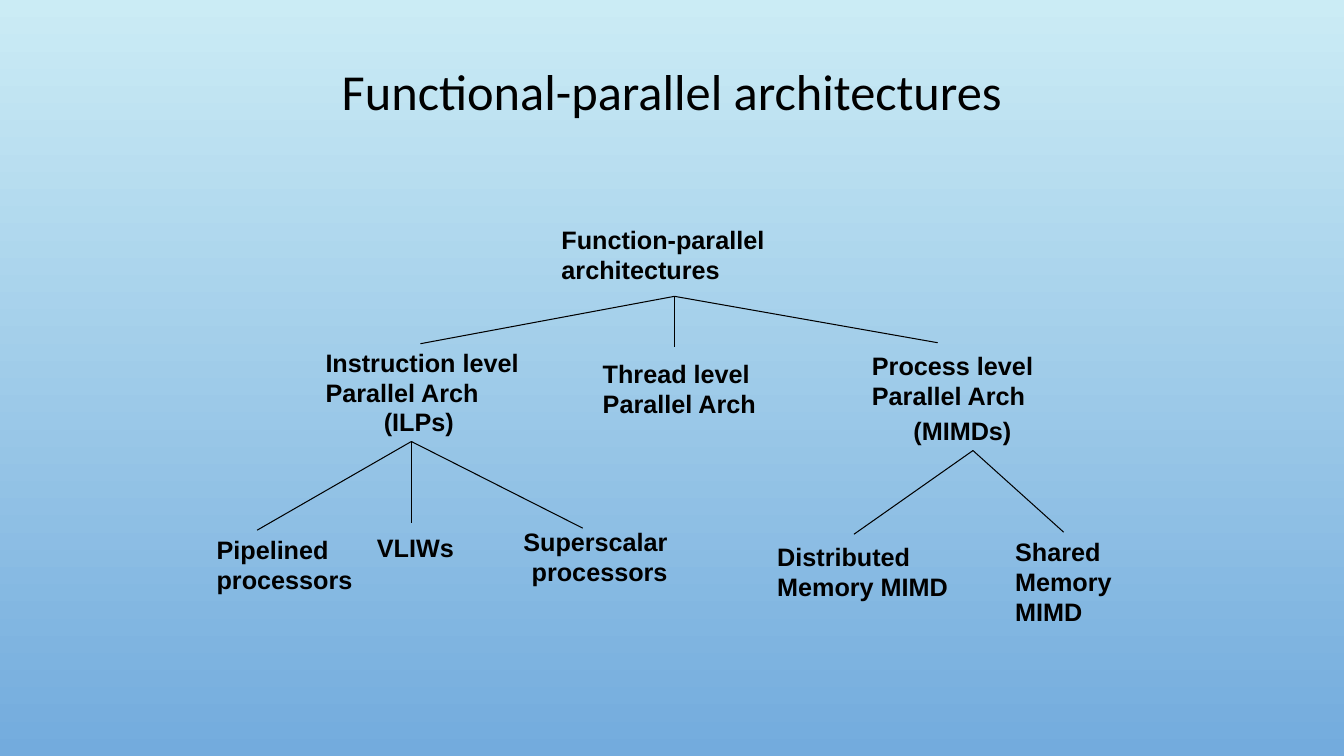
from pptx import Presentation
from pptx.dml.color import RGBColor as Rgb
from pptx.enum.shapes import MSO_CONNECTOR as Link
from pptx.enum.text import MSO_ANCHOR as Anchor, PP_ALIGN as Align
from pptx.oxml.ns import qn
from pptx.util import Inches, Pt
from lxml import etree

THEME = {
    "ink": Rgb.from_string("000000"),
    "sky": ("CBECF5", "73ABDD"),
    "head": ("Calibri", 36, False),
    "node": ("Arial", 18, True),
    "line": 0.75,
}
TITLE = "Functional-parallel architectures"
NODES = [
    ("Function-parallel architectures", (5.47, 1.97, 3.25, 0.9), Align.LEFT),
    ("Instruction level Parallel Arch", (3.13, 3.38, 2.28, 0.71), Align.LEFT),
    ("Thread level Parallel Arch", (5.88, 3.3, 2.46, 0.9), Align.LEFT),
    ("Process level Parallel Arch", (8.55, 3.22, 2.4, 0.9), Align.LEFT),
    ("(ILPs)", (3.47, 3.88, 1.13, 0.5), Align.RIGHT),
    ("(MIMDs)", (8.63, 3.97, 1.5, 0.5), Align.RIGHT),
    ("Pipelined processors", (2.05, 5.05, 2.28, 0.9), Align.LEFT),
    ("VLIWs", (3.38, 5.13, 1.22, 0.5), Align.RIGHT),
    ("Superscalar processors", (4.55, 4.97, 2.17, 0.9), Align.RIGHT),
    ("Distributed Memory MIMD", (7.61, 4.72, 2.08, 1.3), Align.LEFT),
    ("Shared Memory MIMD", (9.97, 4.97, 1.64, 1.3), Align.LEFT),
]
FANS = [
    ((6.69, 2.94), [(4.17, 3.41), (6.69, 3.44), (9.3, 3.4)]),
    ((4.08, 4.38), [(2.55, 5.26), (4.08, 5.19), (5.78, 5.24)]),
    ((9.65, 4.47), [(8.47, 5.3), (10.55, 5.28)]),
]


def add_text(slide, text, box, align, style, anchor):
    frame = slide.shapes.add_textbox(*map(Inches, box)).text_frame
    frame.word_wrap = True
    frame.vertical_anchor = anchor
    para = frame.paragraphs[0]
    para.alignment = align
    run = para.add_run()
    run.text = text
    font = run.font
    font.name, size, font.bold = THEME[style]
    font.size = Pt(size)
    font.color.rgb = THEME["ink"]
    return para


def add_line(slide, start, end):
    line = slide.shapes.add_connector(
        Link.STRAIGHT, *map(Inches, start + end))
    line.line.color.rgb = THEME["ink"]
    line.line.width = Pt(THEME["line"])
    etree.SubElement(line._element.spPr, qn("a:effectLst"))


def paint(slide):
    fill = slide.background.fill
    fill.gradient()
    fill.gradient_angle = 270
    for stop, tone, place in zip(fill.gradient_stops, THEME["sky"], (0, 1)):
        stop.color.rgb = Rgb.from_string(tone)
        stop.position = place


def main():
    deck = Presentation()
    deck.slide_width, deck.slide_height = Inches(13.33), Inches(7.5)
    slide = deck.slides.add_slide(deck.slide_layouts[6])
    paint(slide)
    head = add_text(slide, TITLE, (1, 0.32, 11.33, 1.23),
                    Align.CENTER, "head", Anchor.MIDDLE)
    head.line_spacing = 0.9
    for text, box, align in NODES:
        add_text(slide, text, box, align, "node", Anchor.BOTTOM)
    for start, ends in FANS:
        for end in ends:
            add_line(slide, start, end)
    deck.save("out.pptx")


if __name__ == "__main__":
    main()
